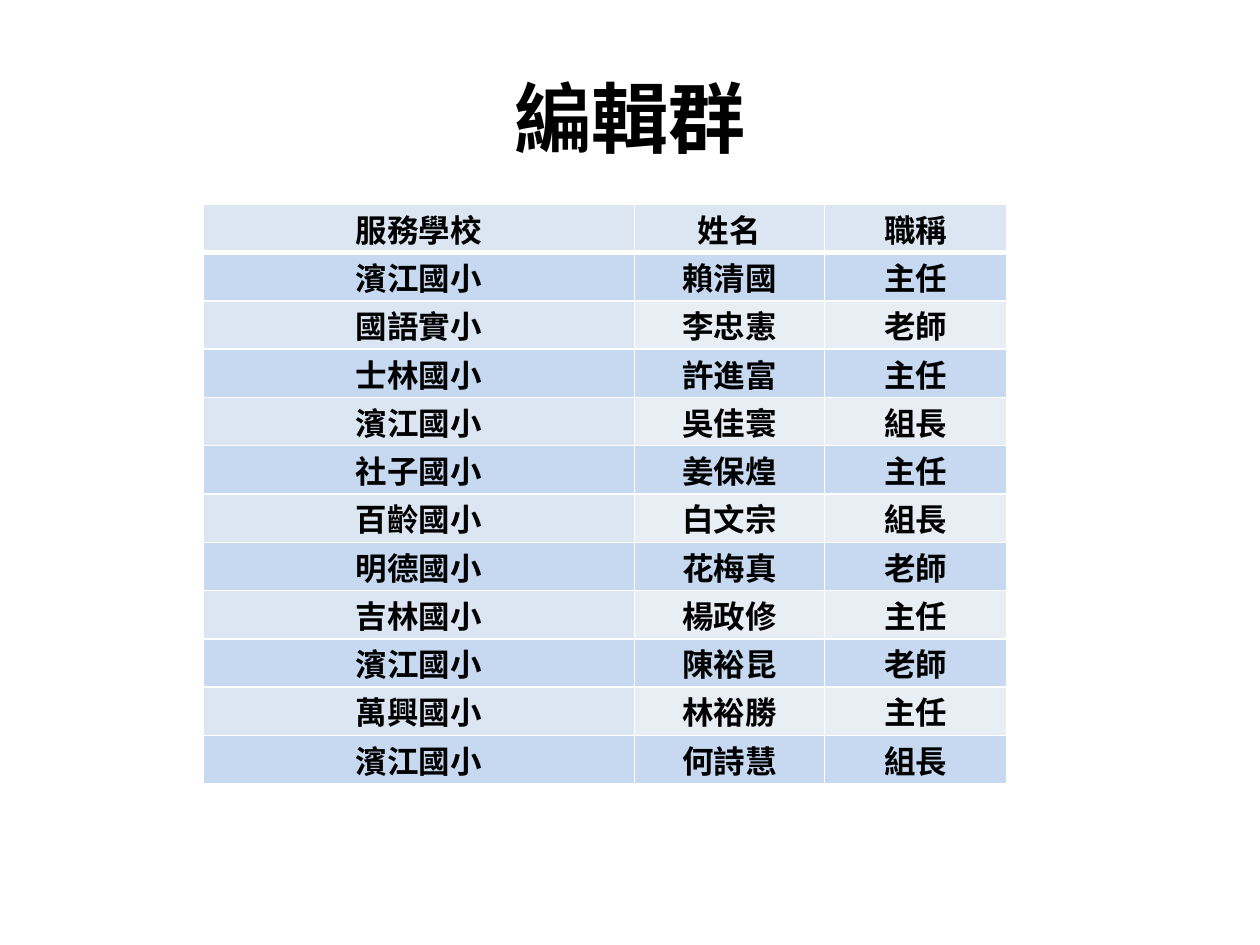
import lxml.etree
import pptx
import pptx.dml.color
import pptx.enum.text
import pptx.oxml.ns
import pptx.util
from pptx.util import Cm

FONT = "Noto Sans CJK SC"
BLACK, WHITE = "000000", "FFFFFF"
HEADER_BLUE, ROW_BLUE, ROW_GREY = "DCE6F2", "C6D9F1", "E9EDF4"

COLUMN_WIDTHS = [Cm(8.69), Cm(3.83), Cm(3.68)]
TABLE_HEIGHT = Cm(11.68)

HEADER = ("服務學校", "姓名", "職稱")
EDITORS = [
    ("濱江國小", "賴清國", "主任"),
    ("國語實小", "李忠憲", "老師"),
    ("士林國小", "許進富", "主任"),
    ("濱江國小", "吳佳寰", "組長"),
    ("社子國小", "姜保煌", "主任"),
    ("百齡國小", "白文宗", "組長"),
    ("明德國小", "花梅真", "老師"),
    ("吉林國小", "楊政修", "主任"),
    ("濱江國小", "陳裕昆", "老師"),
    ("萬興國小", "林裕勝", "主任"),
    ("濱江國小", "何詩慧", "組長"),
]


def rgb(hex_colour):
    return pptx.dml.color.RGBColor.from_string(hex_colour)


def add_child(parent, tag, **attributes):
    child = lxml.etree.SubElement(parent, pptx.oxml.ns.qn(tag))
    for name, value in attributes.items():
        child.set(name, str(value))
    return child


def write_centred(text_frame, text, size):
    paragraph = text_frame.paragraphs[0]
    paragraph.alignment = pptx.enum.text.PP_ALIGN.CENTER
    run = paragraph.add_run()
    run.text = text
    run.font.size = pptx.util.Pt(size)
    run.font.bold = True
    run.font.color.rgb = rgb(BLACK)
    run.font.name = FONT
    add_child(run.font._element, "a:ea", typeface=FONT)


def set_borders(cell, top, bottom):
    """Draw white cell borders; must run before the cell gets its fill."""
    properties = cell._tc.get_or_add_tcPr()
    for side, width in (("L", 1), ("R", 1), ("T", top), ("B", bottom)):
        line = add_child(properties, f"a:ln{side}", w=pptx.util.Pt(width))
        add_child(add_child(line, "a:solidFill"), "a:srgbClr", val=WHITE)


def cell_colour(row, column):
    if row % 2:
        return ROW_BLUE
    return HEADER_BLUE if row == 0 or column == 0 else ROW_GREY


def format_cell(cell, row, column):
    cell.margin_left = cell.margin_right = Cm(0.05)
    cell.margin_top = cell.margin_bottom = 0
    cell.vertical_anchor = pptx.enum.text.MSO_ANCHOR.MIDDLE
    set_borders(cell, top=3 if row == 1 else 1, bottom=3 if row == 0 else 1)
    cell.fill.solid()
    cell.fill.fore_color.rgb = rgb(cell_colour(row, column))


def add_title(slide, text):
    title = slide.shapes.title
    title.left, title.top = Cm(1.27), Cm(0.76)
    title.width, title.height = Cm(22.86), Cm(3.18)
    title.text_frame.vertical_anchor = pptx.enum.text.MSO_ANCHOR.MIDDLE
    write_centred(title.text_frame, text, 44)


def add_editor_table(slide, records):
    table = slide.shapes.add_table(
        len(records), len(COLUMN_WIDTHS), Cm(4.1), Cm(4.12),
        sum(COLUMN_WIDTHS), TABLE_HEIGHT).table
    for column, width in zip(table.columns, COLUMN_WIDTHS):
        column.width = width
    for row, record in enumerate(records):
        for column, text in enumerate(record):
            cell = table.cell(row, column)
            format_cell(cell, row, column)
            write_centred(cell.text_frame, text, 18)


def main():
    presentation = pptx.Presentation()
    presentation.slide_width, presentation.slide_height = Cm(25.4), Cm(19.05)
    slide = presentation.slides.add_slide(presentation.slide_layouts[5])
    add_title(slide, "編輯群")
    add_editor_table(slide, [HEADER] + EDITORS)
    presentation.save("out.pptx")


if __name__ == "__main__":
    main()
